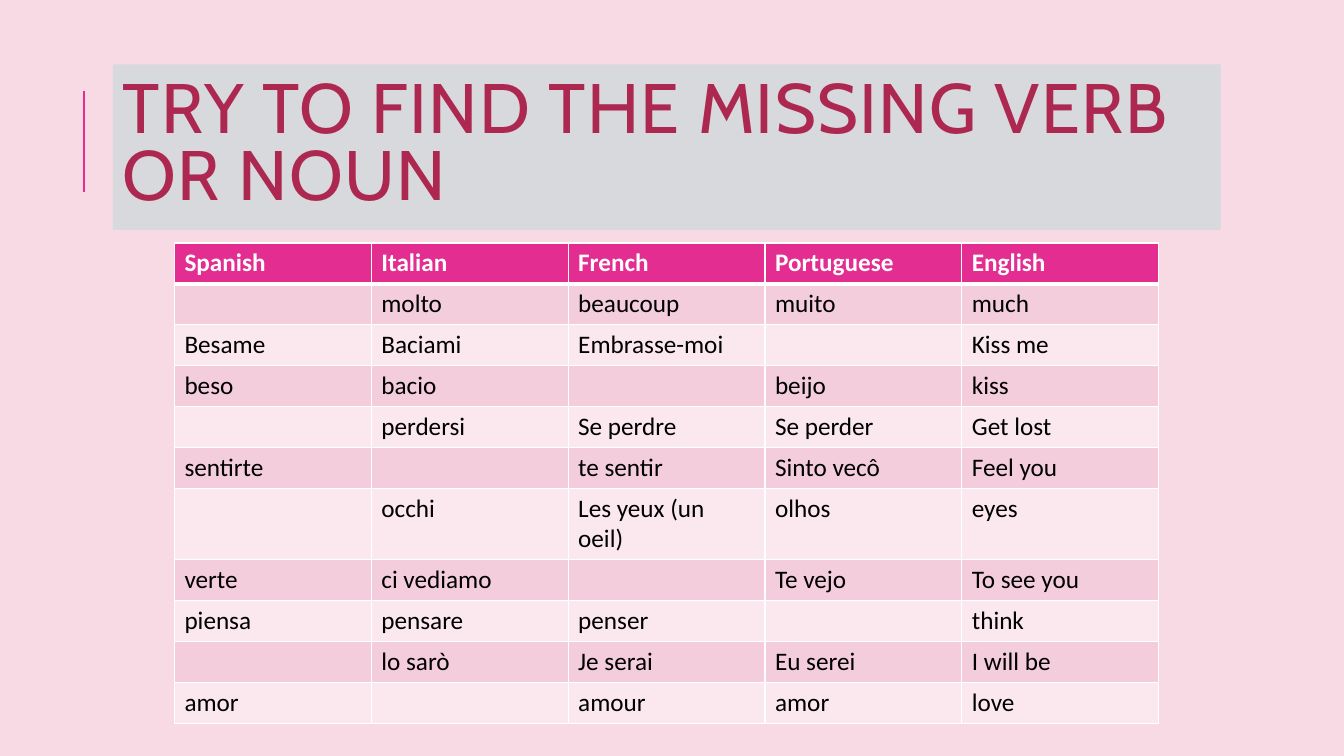
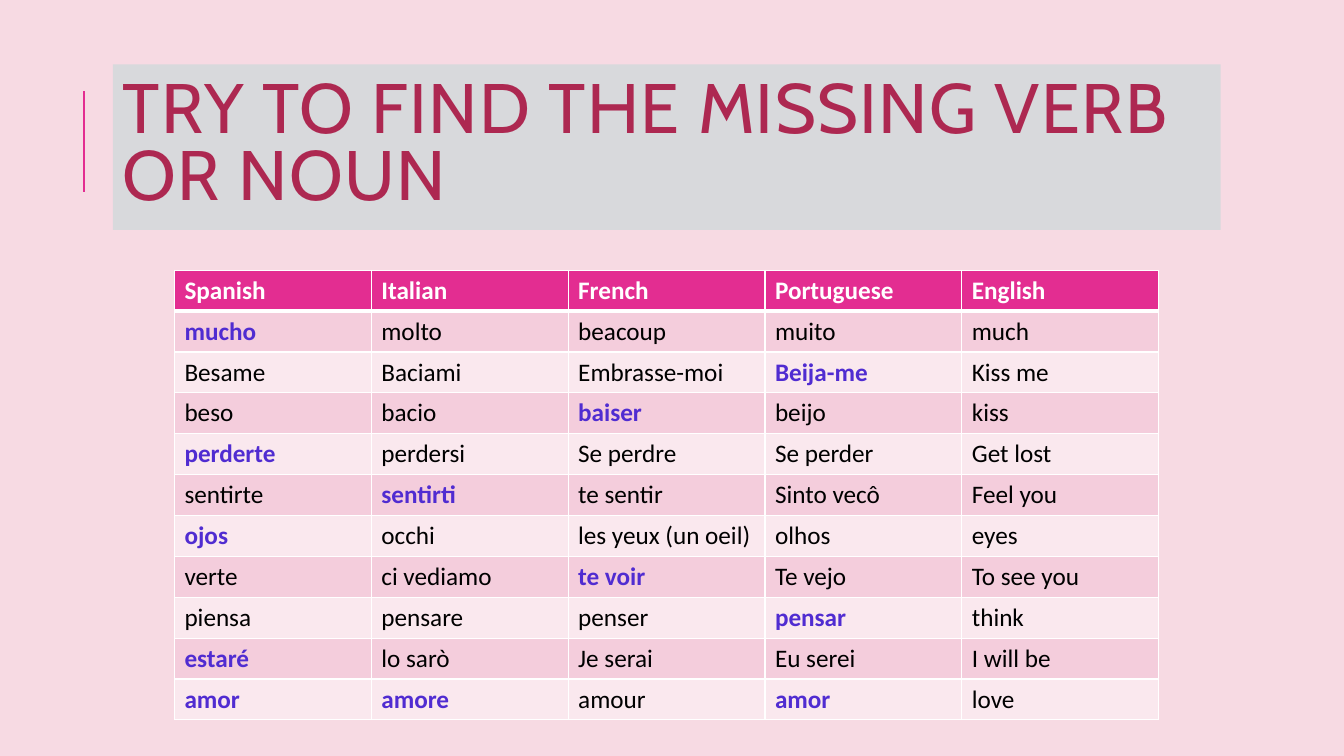
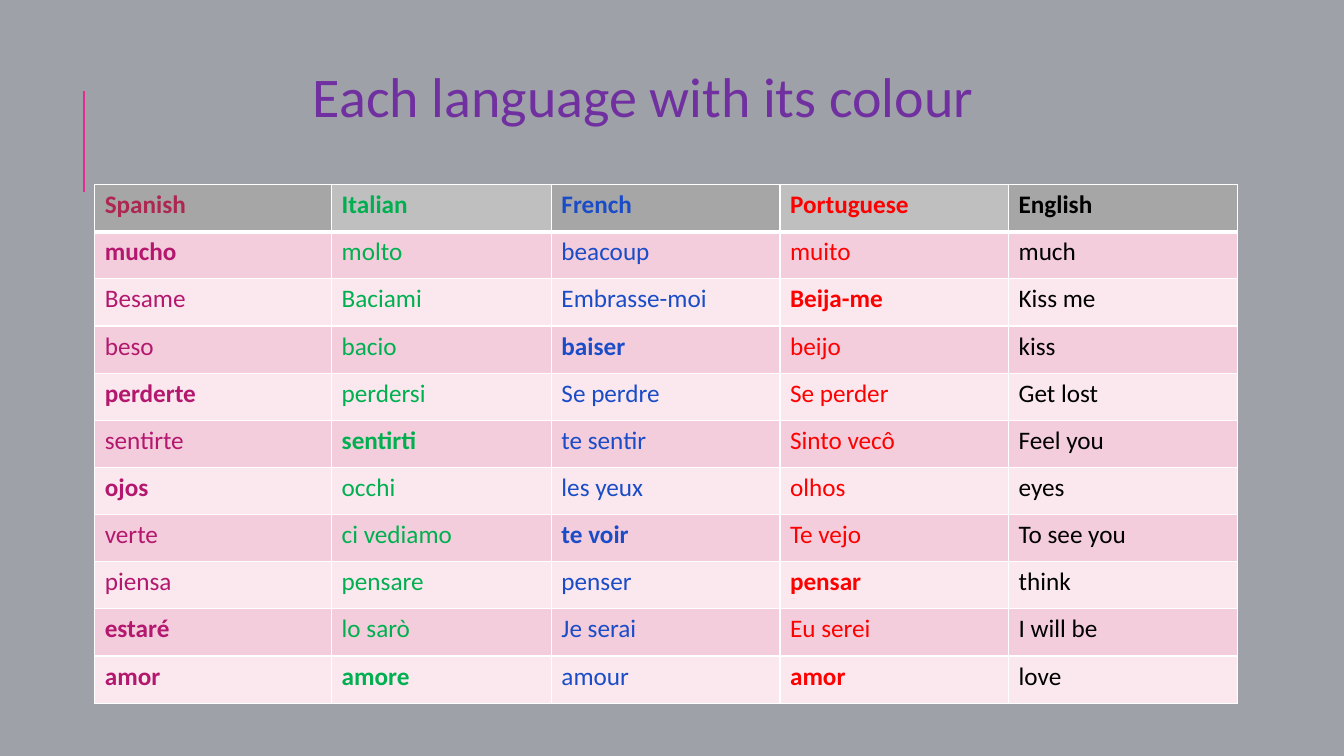
from dataclasses import dataclass, field

from lxml.etree import SubElement
from pptx import Presentation
from pptx.dml.color import RGBColor
from pptx.enum.shapes import MSO_CONNECTOR as CONN, MSO_SHAPE as SHAPE
from pptx.enum.text import MSO_ANCHOR as ANCHOR, PP_ALIGN as ALIGN
from pptx.oxml import parse_xml
from pptx.oxml.ns import nsdecls, qn
from pptx.util import Pt

PINK, ROSE, GREY = "E32D91", "F7DAE3", "9FA1A8"
WHITE, BLACK, CRIMSON = "FFFFFF", "000000", "AD2851"
GREEN, BLUE, RED = "00B050", "1A4CC8", "FF0000"
BANDS = ("F4CDDC", "FAE8EE")
HEADING = "TRY TO FIND THE MISSING VERB OR NOUN"
LANGUAGES = ("Spanish", "Italian", "French", "Portuguese", "English")
MARK = "*"
WORDS = (
    ("*mucho", "molto", "beacoup", "muito", "much"),
    ("Besame", "Baciami", "Embrasse-moi", "*Beija-me", "Kiss me"),
    ("beso", "bacio", "*baiser", "beijo", "kiss"),
    ("*perderte", "perdersi", "Se perdre", "Se perder", "Get lost"),
    ("sentirte", "*sentirti", "te sentir", "Sinto vecô", "Feel you"),
    ("*ojos", "occhi", "les yeux (un oeil)", "olhos", "eyes"),
    ("verte", "ci vediamo", "*te voir", "Te vejo", "To see you"),
    ("piensa", "pensare", "penser", "*pensar", "think"),
    ("*estaré", "lo sarò", "Je serai", "Eu serei", "I will be"),
    ("*amor", "*amore", "amour", "*amor", "love"),
)


@dataclass(frozen=True)
class WordTable:
    """Place, colours and wording of one vocabulary table."""

    left: float
    top: float
    widths: tuple[float, ...] = (140.6,) * 5
    row_height: float = 29.2
    head_fills: tuple[str, ...] = (PINK,) * 5
    head_colors: tuple[str, ...] = (WHITE,) * 5
    colors: tuple[str, ...] = (BLACK,) * 5
    answer_colors: tuple[str, ...] = ("502CD1",) * 5
    show_answers: bool = True
    changes: dict[tuple[int, int], str] = field(default_factory=dict)


COLUMN_COLORS = ("B4186E", GREEN, BLUE, RED, BLACK)
EXERCISE = WordTable(
    124.6, 173.5, show_answers=False,
    changes={(1, 2): "beaucoup", (6, 2): "Les yeux (un oeil)",
             (10, 0): "amor", (10, 3): "amor"},
)
SOLUTION = WordTable(124.6, 193)
COLOURED = WordTable(
    67.7, 131.8, widths=(169.2, 157, 163.3, 163.3, 163.3), row_height=33.7,
    head_fills=("A6A6A6", "BFBFBF", "A6A6A6", "BFBFBF", "A6A6A6"),
    head_colors=(CRIMSON, *COLUMN_COLORS[1:]),
    colors=COLUMN_COLORS, answer_colors=COLUMN_COLORS,
    changes={(6, 2): "les yeux"},
)


def rgb(color: str) -> RGBColor:
    """Turn a hex string into a colour."""
    return RGBColor.from_string(color)


def write(tf, text: str, *, size: float = 18, color: str = BLACK,
          font: str = "Calibri", bold: bool = False, align=ALIGN.LEFT,
          line_spacing: float | None = None, tracking: float = 0) -> None:
    """Write one formatted paragraph into a text frame."""
    tf.word_wrap = True
    p = tf.paragraphs[0]
    p.alignment = align
    if line_spacing:
        p.line_spacing = line_spacing
    r = p.add_run()
    r.text = text
    r.font.size, r.font.name, r.font.bold = Pt(size), font, bold
    r.font.color.rgb = rgb(color)
    if tracking:
        r.font._element.set("spc", str(round(tracking * 100)))


def set_borders(cell, top: float, bottom: float) -> None:
    """Give a cell white borders, with its own top and bottom widths."""
    tc_pr = cell._tc.get_or_add_tcPr()
    sides = (("L", 1), ("R", 1), ("T", top), ("B", bottom))
    for i, (side, width) in enumerate(sides):
        tc_pr.insert(i, parse_xml(
            f'<a:ln{side} {nsdecls("a")} w="{Pt(width)}"><a:solidFill>'
            f'<a:srgbClr val="{WHITE}"/></a:solidFill></a:ln{side}>'))


def add_base(prs, background: str):
    """Add a blank slide with its background and accent line."""
    s = prs.slides.add_slide(prs.slide_layouts[6])
    s.background.fill.solid()
    s.background.fill.fore_color.rgb = rgb(background)
    line = s.shapes.add_connector(
        CONN.STRAIGHT, Pt(60), Pt(136.8), Pt(60), Pt(64.8))
    line.line.color.rgb = rgb(PINK)
    line.line.width = Pt(1.5)
    SubElement(line._element.spPr, qn("a:effectLst"))
    return s


def add_banner(s) -> None:
    """Add the grey title banner."""
    sp = s.shapes.add_shape(
        SHAPE.RECTANGLE, Pt(80.6), Pt(46.1), Pt(791.3), Pt(118.1))
    sp.shadow.inherit = False
    sp.fill.solid()
    sp.fill.fore_color.rgb = rgb("D8D9DC")
    sp.line.fill.background()
    sp.text_frame.vertical_anchor = ANCHOR.MIDDLE
    write(sp.text_frame, HEADING, size=50, color=CRIMSON, font="Cabin",
          line_spacing=0.8, tracking=1)


def add_words(s, spec: WordTable) -> None:
    """Add a vocabulary table."""
    rows = (LANGUAGES, *WORDS)
    table = s.shapes.add_table(
        len(rows), len(LANGUAGES), Pt(spec.left), Pt(spec.top),
        Pt(sum(spec.widths)), Pt(spec.row_height * len(rows))).table
    table.horz_banding = False
    for column, width in zip(table.columns, spec.widths):
        column.width = Pt(width)
    for i, words in enumerate(rows):
        table.rows[i].height = Pt(spec.row_height)
        for j, word in enumerate(words):
            cell = table.cell(i, j)
            head = i == 0
            set_borders(cell, 3 if i == 1 else 1, 3 if head else 1)
            cell.fill.solid()
            fill = spec.head_fills[j] if head else BANDS[(i - 1) % 2]
            cell.fill.fore_color.rgb = rgb(fill)
            word = spec.changes.get((i, j), word)
            answer = word.startswith(MARK)
            if answer and not spec.show_answers:
                continue
            colors = (spec.head_colors if head else
                      spec.answer_colors if answer else spec.colors)
            write(cell.text_frame, word.removeprefix(MARK),
                  color=colors[j], bold=head or answer)


def main() -> None:
    """Build and save the presentation."""
    prs = Presentation()
    prs.slide_width, prs.slide_height = Pt(960), Pt(540)
    for spec in (EXERCISE, SOLUTION):
        s = add_base(prs, ROSE)
        add_banner(s)
        add_words(s, spec)
    s = add_base(prs, GREY)
    add_words(s, COLOURED)
    box = s.shapes.add_textbox(Pt(114.5), Pt(40.3), Pt(689.8), Pt(55.4))
    write(box.text_frame, "Each language with its colour", size=40,
          color="7030A0", align=ALIGN.CENTER)
    prs.save("out.pptx")


if __name__ == "__main__":
    main()
